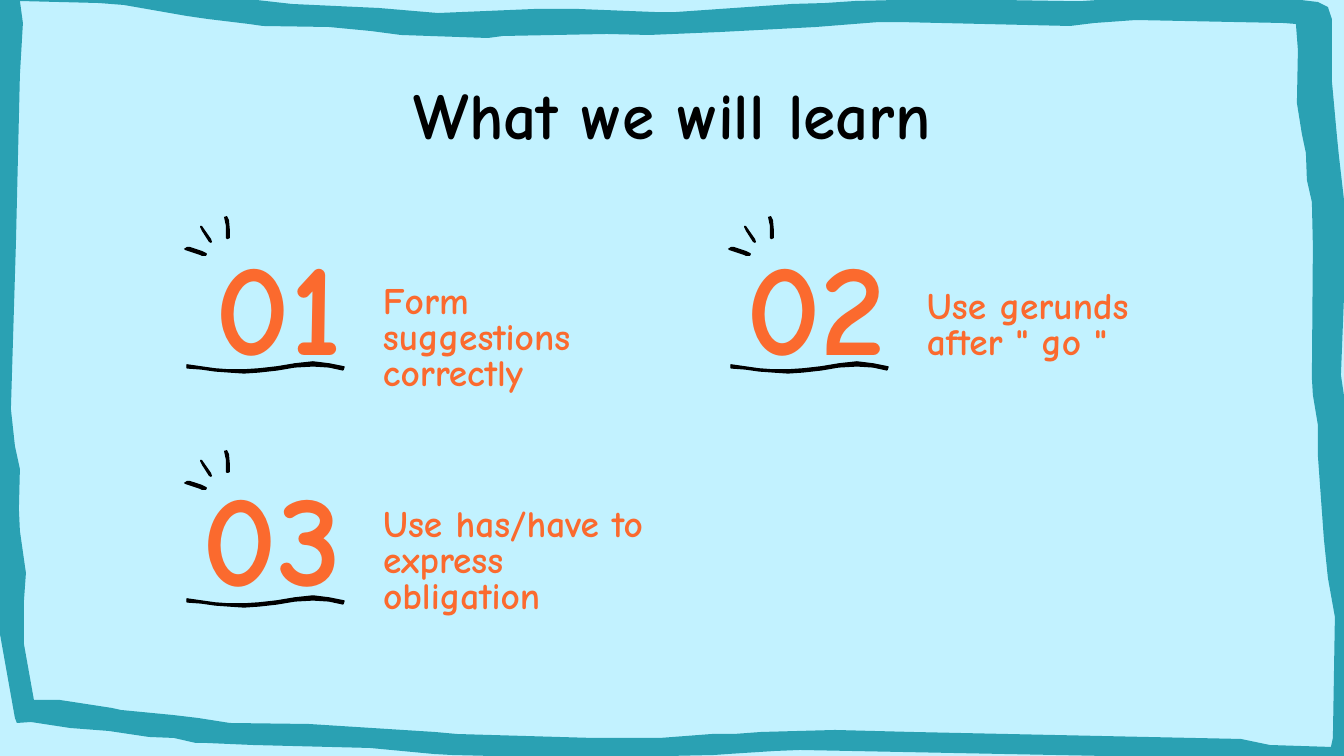
from pptx import Presentation
from pptx import util as u
from pptx.dml.color import RGBColor
from pptx.enum import text

PX = 9144000 / 1344
FONT = "Comic Neue"
INK = {"sky": "C2F2FF", "teal": "2AA1B3", "black": "000000", "orange": "FB6A2E"}

OUTER = [
    (17, 723), (15, 718), (-1, 628), (-3, 566), (-5, 544), (-12, 496),
    (-20, 437), (-23, 418), (-19, 200), (-16, 42), (-12, 22), (-7, -16),
    (-5, -17), (8, -26), (30, -26), (74, -20), (195, -7), (292, 4),
    (379, 8), (438, 13), (534, 9), (579, 9), (655, 12), (676, 12),
    (792, 4), (825, 3), (855, 1), (938, -1), (1064, 1), (1083, 1),
    (1142, -3), (1301, 0), (1318, 2), (1328, 7), (1332, 19), (1332, 81),
    (1337, 136), (1339, 156), (1344, 199), (1347, 222), (1341, 375),
    (1344, 395), (1349, 431), (1347, 504), (1349, 519), (1355, 569),
    (1356, 582), (1361, 675), (1360, 741), (1350, 759), (1325, 765),
    (1251, 759), (1208, 758), (1004, 754), (800, 750), (775, 751),
    (728, 754), (714, 755), (575, 758), (452, 755), (434, 754),
    (370, 748), (253, 745), (207, 743), (196, 743), (174, 738),
    (149, 737), (109, 731), (70, 728), (31, 722),
]
INNER = [
    (34, 700), (60, 700), (112, 708), (121, 710), (173, 715), (198, 718),
    (230, 723), (309, 724), (435, 732), (457, 734), (593, 738), (660, 738),
    (712, 734), (734, 734), (761, 732), (835, 730), (913, 732),
    (1241, 739), (1270, 745), (1331, 747), (1333, 738), (1335, 617),
    (1328, 578), (1324, 539), (1320, 484), (1318, 456), (1318, 425),
    (1313, 395), (1312, 378), (1313, 246), (1312, 202), (1307, 180),
    (1306, 153), (1302, 134), (1297, 103), (1298, 50), (1296, 24),
    (1284, 23), (1136, 20), (1094, 23), (1070, 26), (899, 22), (879, 22),
    (816, 27), (720, 32), (649, 35), (607, 34), (503, 36), (488, 38),
    (401, 35), (371, 31), (329, 27), (263, 26), (249, 24), (208, 19),
    (187, 16), (124, 5), (99, 3), (20, 1), (23, 23), (20, 75), (16, 243),
    (11, 409), (15, 446), (20, 469), (19, 509), (20, 531), (26, 573),
    (24, 601), (24, 644),
]
WAVE = [
    (0, 3), (14, 5), (28, 7), (42, 8), (57, 8), (72, 7), (90, 5), (108, 2),
    (126, 0), (142, 2), (157, 5), (156, 8), (142, 5), (126, 4), (108, 5),
    (90, 8), (72, 10), (57, 11), (42, 10), (28, 9), (14, 7), (0, 6),
]
SPARKS = [
    [(3, 31), (6, 31), (18, 35), (22, 37), (23, 38), (22, 40), (18, 40),
     (16, 39), (4, 35), (1, 34), (0, 33)],
    [(16, 11), (16, 10), (18, 10), (27, 23), (28, 26), (27, 27), (25, 26),
     (18, 15)],
    [(46, 15), (46, 22), (44, 23), (43, 23), (42, 22), (42, 10), (40, 1),
     (43, 0), (45, 4)],
]
GOALS = [
    ("01", "Form suggestions correctly", 0, 0, 273, 285),
    ("02", 'Use gerunds after " go "', 1, 0, 278, 289),
    ("03", "Use has/have to express obligation", 0, 1, 496, 317),
]


def emu(n):
    return u.Emu(round(n * PX))


def rgb(name):
    return RGBColor.from_string(INK[name])


def blob(slide, loops, ink, left=0, top=0, edge=False):
    first, *rest = loops
    pen = slide.shapes.build_freeform(*first[0], scale=PX)
    pen.add_line_segments(first[1:], close=True)
    for loop in rest:
        pen.move_to(*loop[0])
        pen.add_line_segments(loop[1:], close=True)
    shape = pen.convert_to_shape(emu(left), emu(top))
    shape.shadow.inherit = False
    shape.fill.solid()
    shape.fill.fore_color.rgb = rgb(ink)
    if edge:
        shape.line.color.rgb = rgb(ink)
        shape.line.width = u.Pt(0.75)
    else:
        shape.line.fill.background()


def label(slide, words, box, size, ink, align, anchor, lead=1.0):
    frame = slide.shapes.add_textbox(*map(emu, box)).text_frame
    frame.word_wrap = True
    frame.vertical_anchor = anchor
    frame.margin_left = frame.margin_right = emu(13)
    frame.margin_top = frame.margin_bottom = emu(13)
    frame.text = words
    para = frame.paragraphs[0]
    para.alignment = align
    para.line_spacing = lead
    font = para.runs[0].font
    font.name, font.size, font.bold = FONT, u.Pt(size), True
    font.color.rgb = rgb(ink)


def goal(slide, num, words, col, row, top, width):
    left = 544 * col
    drop = 234 * row
    blob(slide, [WAVE], "black", 187 + left, 362 + drop, edge=True)
    for spark in SPARKS:
        blob(slide, [spark], "black", 184 + left, 216 + drop)
    label(slide, num, (167 + left, 247 + 231 * row, 188, 113), 70, "orange",
          text.PP_ALIGN.RIGHT, text.MSO_ANCHOR.MIDDLE)
    label(slide, words, (370 + left, top, width, 105), 20, "orange",
          text.PP_ALIGN.LEFT, text.MSO_ANCHOR.TOP, 0.8)


def main():
    deck = Presentation()
    deck.slide_width, deck.slide_height = emu(1344), emu(756)
    slide = deck.slides.add_slide(deck.slide_layouts[6])
    slide.background.fill.solid()
    slide.background.fill.fore_color.rgb = rgb("sky")
    blob(slide, [OUTER, INNER], "teal")
    label(slide, "What we will learn", (106, 71, 1133, 85), 35, "black",
          text.PP_ALIGN.CENTER, text.MSO_ANCHOR.MIDDLE)
    for item in GOALS:
        goal(slide, *item)
    deck.save("out.pptx")


if __name__ == "__main__":
    main()
